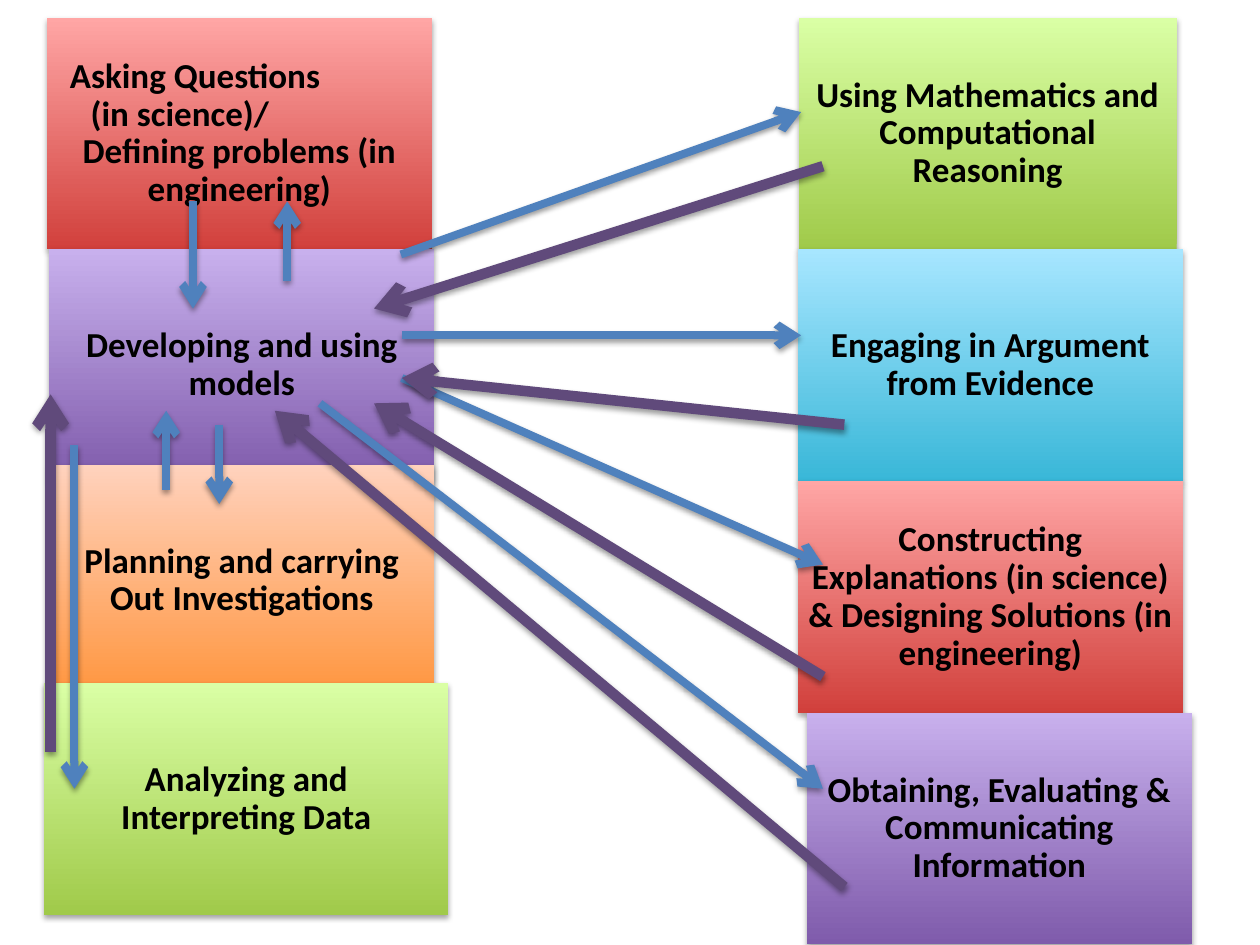
"""Build a slide of science and engineering practices joined by arrows."""
from pptx import Presentation
from pptx import util as u
from pptx.dml.color import RGBColor
from pptx.enum import shapes, text
from pptx.oxml import parse_xml
from pptx.oxml.ns import nsdecls, qn

HIGH = 4.67
TOP = 0.36
RED = ("D1403C", "FFA6A5")
GREEN = ("A0CA4A", "DAFFA5")
PURPLE = ("7F5BAB", "C8B0ED")
CYAN = ("39B7D8", "A7E6FF")
ORANGE = ("FF953E", "FFD2BD")

LEFT = [
    (0.94, TOP, 7.77, RED,
     ["Asking Questions", "(in science)/", "Defining problems (in engineering)"]),
    (0.99, TOP + HIGH, 7.77, PURPLE, ["Developing and using models"]),
    (0.99, 9.37, 7.77, ORANGE, ["Planning and carrying Out Investigations"]),
    (0.89, 13.77, 8.15, GREEN, ["Analyzing and Interpreting Data"]),
]
RIGHT = [
    (16.1, 7.62, GREEN, "Using Mathematics and Computational Reasoning"),
    (16.08, 7.77, CYAN, "Engaging in Argument from Evidence"),
    (16.08, 7.77, RED, "Constructing Explanations (in science) & "
     "Designing Solutions (in engineering)"),
    (16.26, 7.77, PURPLE, "Obtaining, Evaluating & Communicating Information"),
]
BLUE_ARROWS = [
    (8.1, 7.62, 16.59, 11.38),
    (6.45, 8.13, 16.59, 15.9),
    (8.1, 6.76, 16.15, 6.76),
    (5.79, 5.66, 5.79, 4.06),
    (8.08, 5.13, 16.15, 2.26),
    (4.42, 8.56, 4.42, 10.16),
    (1.5, 8.97, 1.5, 15.9),
    (3.89, 4.06, 3.89, 6.22),
    (3.35, 9.88, 3.35, 8.28),
]
PLUM_ARROWS = [
    (16.59, 3.35, 7.54, 6.22),
    (17.02, 8.56, 8.1, 7.62),
    (16.59, 13.64, 7.54, 8.13),
    (17.02, 17.88, 5.54, 8.28),
    (1.02, 15.16, 1.02, 7.95),
]


def tint(color, value):
    """Give a colour a hex value."""
    color.rgb = RGBColor.from_string(value)


def shade(item, alpha):
    """Add a soft shadow below an item."""
    item._element.spPr.append(parse_xml(
        f'<a:effectLst {nsdecls("a")}><a:outerShdw blurRad="40000" dist="22000" '
        f'dir="5400000" rotWithShape="0"><a:srgbClr val="000000">'
        f'<a:alpha val="{alpha}000"/></a:srgbClr></a:outerShdw></a:effectLst>'))


def indent(para, size):
    """Align a paragraph left with a margin."""
    para.alignment = text.PP_ALIGN.LEFT
    para._p.get_or_add_pPr().set("marL", str(u.Cm(size)))


def write(frame, lines):
    """Fill a text frame with bold centred paragraphs."""
    frame.word_wrap = True
    frame.vertical_anchor = text.MSO_ANCHOR.MIDDLE
    frame.margin_left = frame.margin_right = u.Cm(0.2)
    frame.margin_top = frame.margin_bottom = u.Cm(0.2)
    frame.text = "\n".join(lines)
    for para in frame.paragraphs:
        para.alignment = text.PP_ALIGN.CENTER
        para.line_spacing = 0.9
        font = para.runs[0].font
        font.name, font.size, font.bold = "Calibri", u.Pt(20), True
        tint(font.color, "000000")


def add_box(slide, left, top, width, hues, lines):
    """Add a gradient box with its text."""
    box = slide.shapes.add_shape(
        shapes.MSO_SHAPE.RECTANGLE,
        u.Cm(left), u.Cm(top), u.Cm(width), u.Cm(HIGH))
    box.fill.gradient()
    box.fill.gradient_angle = 90
    for stop, hue in zip(box.fill.gradient_stops, hues):
        tint(stop.color, hue)
    box.line.fill.background()
    shade(box, 35)
    write(box.text_frame, lines)
    return box


def add_arrow(slide, ends, hue, weight):
    """Add an arrow between two points."""
    arrow = slide.shapes.add_connector(
        shapes.MSO_CONNECTOR.STRAIGHT, *map(u.Cm, ends))
    tint(arrow.line.color, hue)
    arrow.line.width = u.Pt(weight)
    arrow._element.spPr.find(qn("a:ln")).append(
        parse_xml(f'<a:tailEnd {nsdecls("a")} type="arrow"/>'))
    shade(arrow, 38)


def main():
    """Build and save the slide."""
    deck = Presentation()
    deck.slide_width, deck.slide_height = u.Cm(25.4), u.Cm(19.05)
    slide = deck.slides.add_slide(deck.slide_layouts[6])
    boxes = [add_box(slide, *row) for row in LEFT]
    for para, size in zip(boxes[0].text_frame.paragraphs, (0.27, 0.69)):
        indent(para, size)
    for row, (left, width, hues, label) in enumerate(RIGHT):
        add_box(slide, left, TOP + row * HIGH, width, hues, [label])
    for ends in BLUE_ARROWS:
        add_arrow(slide, ends, "4F81BD", 4.5)
    for ends in PLUM_ARROWS:
        add_arrow(slide, ends, "604A7B", 6)
    deck.save("out.pptx")


if __name__ == "__main__":
    main()
